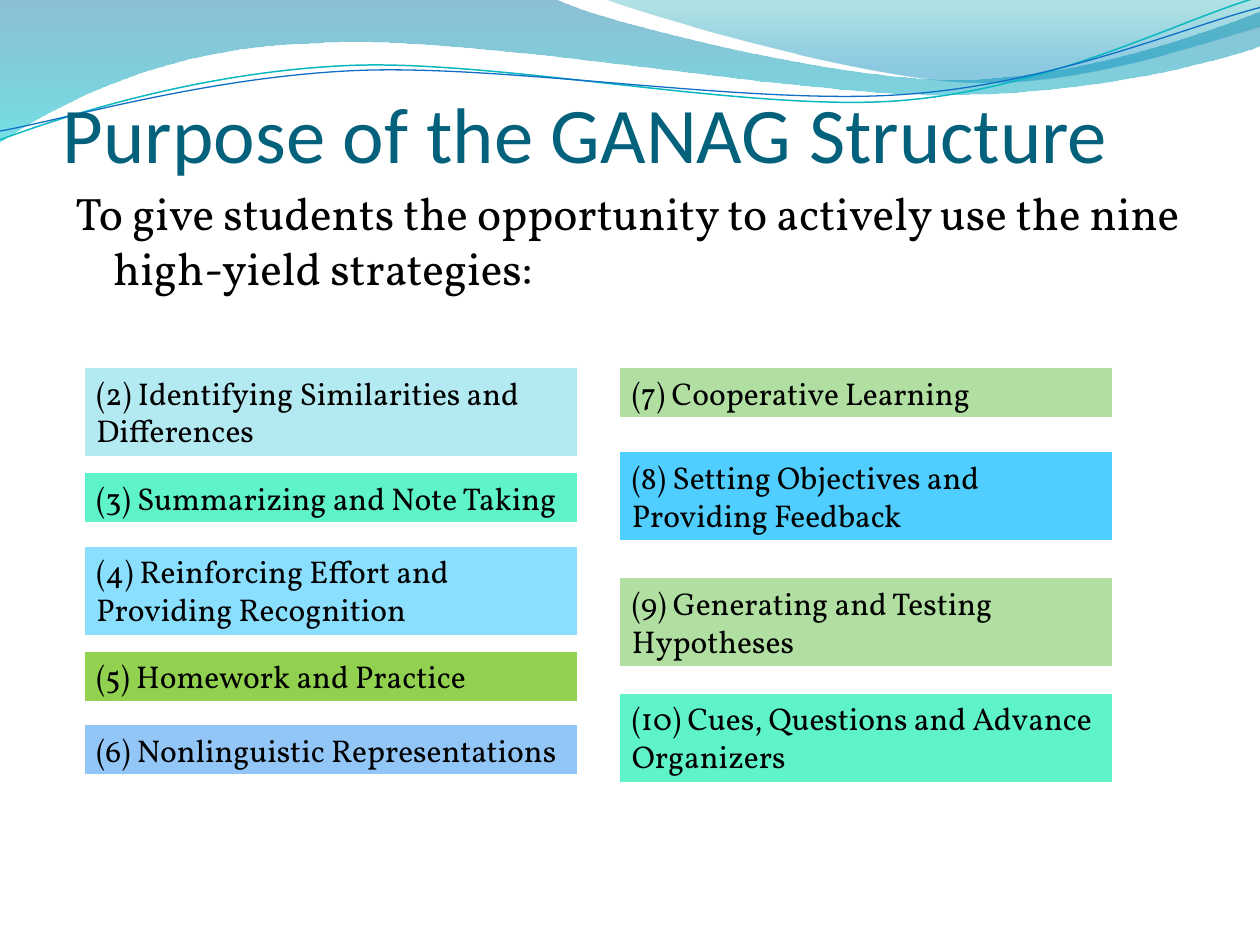
from dataclasses import dataclass
from math import cos, radians, sin

from lxml.etree import SubElement
from pptx import Presentation
from pptx.dml.color import RGBColor
from pptx.enum.shapes import MSO_SHAPE
from pptx.enum.text import MSO_ANCHOR, MSO_AUTO_SIZE, PP_ALIGN
from pptx.oxml.ns import qn
from pptx.util import Inches, Pt

WHITE = RGBColor(0xFF, 0xFF, 0xFF)
BLACK = RGBColor(0x00, 0x00, 0x00)
TITLE_TEAL = RGBColor(0x04, 0x61, 0x7B)
DEEP_BLUE = RGBColor(0x00, 0x74, 0xA1)
CYAN = RGBColor(0x00, 0xC6, 0xCF)
TEAL = RGBColor(0x00, 0xA1, 0xA9)
SEA_BLUE = RGBColor(0x00, 0x8B, 0xBF)
LINE_TEAL = RGBColor(0x0A, 0xB8, 0xBF)
LINE_BLUE = RGBColor(0x0F, 0x6F, 0xC6)
PALE_CYAN = RGBColor(0xB3, 0xEA, 0xF2)
MINT = RGBColor(0x5F, 0xF3, 0xCA)
SKY = RGBColor(0x8A, 0xDF, 0xFF)
GREEN = RGBColor(0x92, 0xD0, 0x50)
PERIWINKLE = RGBColor(0x91, 0xC6, 0xF7)
SAGE = RGBColor(0xB0, 0xDF, 0xA1)
AZURE = RGBColor(0x4F, 0xCE, 0xFF)

BODY_FONT = "Vollkorn"
GRID = 12  # box positions are in twelfths of an inch
LEFT_X, RIGHT_X, BOX_W = 8, 59, 47
LINE_HEIGHTS = {1: 0.4, 2: 0.71}
LINE_TILT = -2.7


@dataclass
class Stop:
    pos: int
    color: RGBColor
    opacity: int


@dataclass
class Wave:
    """Outline in inches: each segment is a line (1 point) or a cubic (3 points)."""
    start: tuple
    segments: list
    stops: tuple = ()
    line: RGBColor | None = None
    width: float = 0
    center: tuple = (0, 0)
    tilt: float = 0


@dataclass
class Strategy:
    text: str
    left: int
    top: int
    lines: int
    fill: RGBColor


WAVES = [
    Wave((0, 0), [[(4.4, -0.01)],
                  [(4.76, 0.17), (6.64, 0.63), (7.58, 0.63)],
                  [(8.53, 0.63), (9.58, 0.26), (10, 0.09)],
                  [(10.01, 0.36)],
                  [(9.83, 0.44), (8.7, 0.76), (7.46, 0.75)],
                  [(6.22, 0.75), (3.82, 0.28), (2.57, 0.34)],
                  [(1.29, 0.36), (0.46, 0.83), (-0.01, 1.13)],
                  [(0, 0)]],
         stops=(Stop(0, DEEP_BLUE, 45), Stop(100, CYAN, 55))),
    Wave((4.79, -0.01), [[(5.09, 0.11), (6.82, 0.62), (7.69, 0.65)],
                         [(8.56, 0.69), (9.61, 0.32), (10, 0.21)],
                         [(10, 0)], [(4.79, -0.01)]],
         stops=(Stop(0, TEAL, 30), Stop(80, SEA_BLUE, 45))),
    Wave((0, 1.11), [[(0.48, 0.93), (1.58, 0.57), (2.77, 0.52)],
                     [(3.95, 0.47), (5.93, 0.89), (7.13, 0.8)],
                     [(8.33, 0.71), (9.38, 0.15), (9.98, -0.02)]],
         line=LINE_TEAL, width=0.85, center=(4.99, 0.57), tilt=LINE_TILT),
    Wave((0, 1.04), [[(0.47, 0.96), (1.64, 0.61), (2.83, 0.56)],
                     [(4.03, 0.51), (5.97, 0.84), (7.17, 0.75)],
                     [(8.36, 0.67), (9.41, 0.21), (10, 0.06)]],
         line=LINE_BLUE, width=0.75, center=(5, 0.59), tilt=LINE_TILT),
]

STRATEGIES = [
    Strategy("(2) Identifying Similarities and Differences", LEFT_X, 35, 2, PALE_CYAN),
    Strategy("(3) Summarizing and Note Taking", LEFT_X, 45, 1, MINT),
    Strategy("(4) Reinforcing Effort and Providing Recognition", LEFT_X, 52, 2, SKY),
    Strategy("(5) Homework and Practice", LEFT_X, 62, 1, GREEN),
    Strategy("(6) Nonlinguistic Representations", LEFT_X, 69, 1, PERIWINKLE),
    Strategy("(7) Cooperative Learning", RIGHT_X, 35, 1, SAGE),
    Strategy("(8) Setting Objectives and Providing Feedback", RIGHT_X, 43, 2, AZURE),
    Strategy("(9) Generating and Testing Hypotheses", RIGHT_X, 55, 2, SAGE),
    Strategy("(10) Cues, Questions and Advance Organizers", RIGHT_X, 66, 2, MINT),
]


def level(wave: Wave, point: tuple) -> tuple:
    """Point in EMU before the tilt of its wave is applied."""
    cx, cy = wave.center
    dx, dy = point[0] - cx, point[1] - cy
    a = radians(-wave.tilt)
    return (Inches(cx + dx * cos(a) - dy * sin(a)),
            Inches(cy + dx * sin(a) + dy * cos(a)))


def set_gradient(sp, stops: tuple) -> None:
    """Top-to-bottom gradient with an opacity for each stop."""
    sp.fill.gradient()
    grad = sp._element.spPr.find(qn("a:gradFill"))
    for child in list(grad):
        grad.remove(child)
    gs_list = SubElement(grad, qn("a:gsLst"))
    for stop in stops:
        gs = SubElement(gs_list, qn("a:gs"), pos=str(stop.pos * 1000))
        clr = SubElement(gs, qn("a:srgbClr"), val=str(stop.color))
        SubElement(clr, qn("a:alpha"), val=str(stop.opacity * 1000))
    SubElement(grad, qn("a:lin"), ang="5400000", scaled="0")


def draw_wave(s, wave: Wave) -> None:
    segments = [[level(wave, pt) for pt in seg] for seg in wave.segments]
    builder = s.shapes.build_freeform(*level(wave, wave.start))
    builder.add_line_segments([seg[-1] for seg in segments], close=bool(wave.stops))
    sp = builder.convert_to_shape()

    # Turn the three-point segments into cubic curves
    lines = list(sp._element.iter(qn("a:lnTo")))
    for node, seg in zip(lines, segments):
        if len(seg) == 3:
            node.tag = qn("a:cubicBezTo")
            for child in list(node):
                node.remove(child)
            for x, y in seg:
                SubElement(node, qn("a:pt"), x=str(x - sp.left), y=str(y - sp.top))

    sp.rotation = wave.tilt
    sp.shadow.inherit = False
    if wave.stops:
        set_gradient(sp, wave.stops)
        sp.line.fill.background()
    else:
        sp.fill.background()
        sp.line.color.rgb = wave.line
        sp.line.width = Pt(wave.width)


def write_text(tf, text: str, size: float, font: str, color: RGBColor):
    tf.word_wrap = True
    p = tf.paragraphs[0]
    p.alignment = PP_ALIGN.LEFT
    r = p.add_run()
    r.text = text
    r.font.size = Pt(size)
    r.font.name = font
    r.font.color.rgb = color
    return p


def draw_strategy(s, item: Strategy) -> None:
    sp = s.shapes.add_shape(MSO_SHAPE.RECTANGLE,
                            Inches(item.left / GRID), Inches(item.top / GRID),
                            Inches(BOX_W / GRID), Inches(LINE_HEIGHTS[item.lines]))
    sp.shadow.inherit = False
    sp.fill.solid()
    sp.fill.fore_color.rgb = item.fill
    sp.line.color.rgb = WHITE
    sp.line.width = Pt(0.75)
    tf = sp.text_frame
    write_text(tf, item.text, 18, BODY_FONT, BLACK)
    tf.vertical_anchor = MSO_ANCHOR.TOP
    tf.auto_size = MSO_AUTO_SIZE.SHAPE_TO_FIT_TEXT


def main() -> None:
    prs = Presentation()
    prs.slide_width, prs.slide_height = Inches(10), Inches(7.5)
    s = prs.slides.add_slide(prs.slide_layouts[6])

    # Wave decoration
    for wave in WAVES:
        draw_wave(s, wave)

    # Introduction with a hanging indent
    tf = s.shapes.add_textbox(Inches(0.5), Inches(1.42), Inches(9), Inches(1.33)).text_frame
    p = write_text(tf, "To give students the opportunity to actively use the nine "
                   "high-yield strategies:", 26, BODY_FONT, BLACK)
    p.space_before = Pt(5.2)
    pPr = p._p.get_or_add_pPr()
    pPr.set("marL", str(Inches(0.3)))
    pPr.set("indent", str(Inches(-0.3)))

    # Title
    tf = s.shapes.add_textbox(Inches(0.5), Inches(0.5), Inches(9), Inches(0.92)).text_frame
    tf.margin_left = tf.margin_right = tf.margin_bottom = 0
    tf.vertical_anchor = MSO_ANCHOR.BOTTOM
    write_text(tf, "Purpose of the GANAG Structure", 45, "Calibri", TITLE_TEAL)

    # Strategy boxes
    for item in STRATEGIES:
        draw_strategy(s, item)

    prs.save("out.pptx")


if __name__ == "__main__":
    main()
